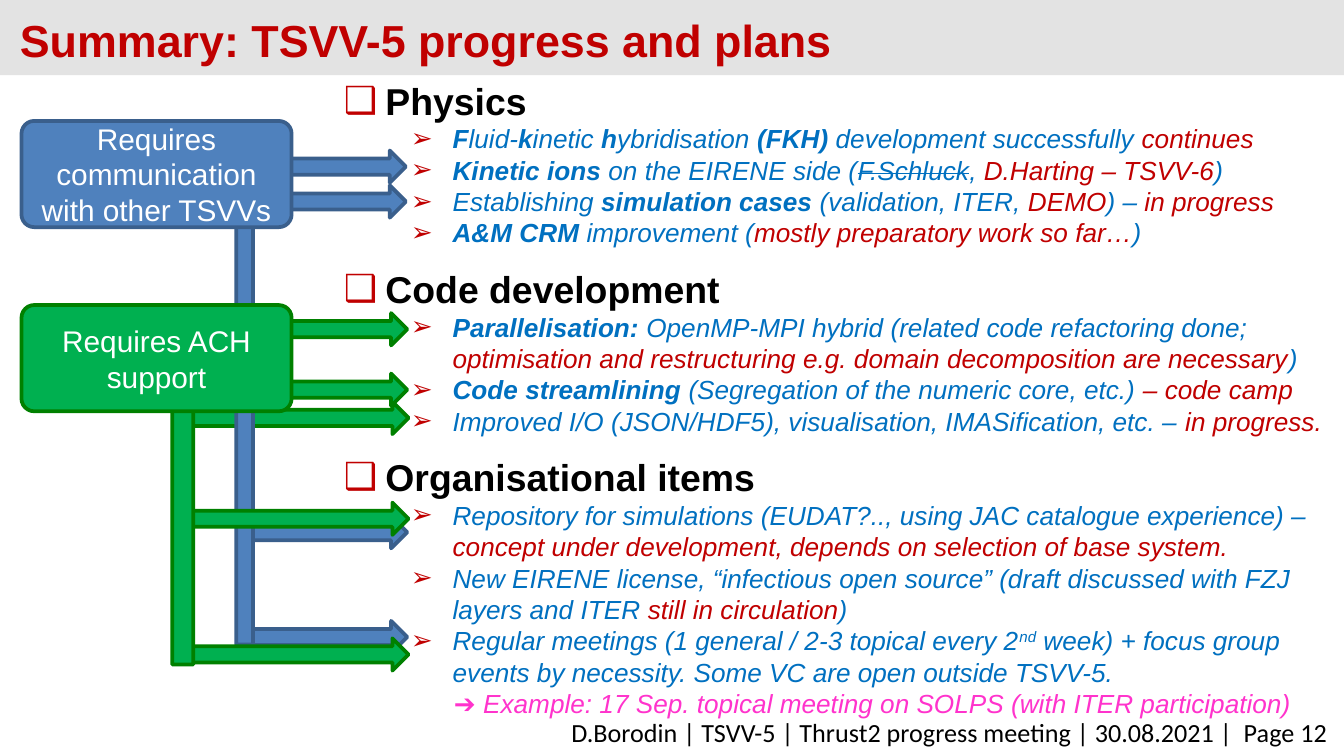
"""Build the TSVV-5 progress and plans summary slide."""
from dataclasses import dataclass

from lxml import etree
from pptx import Presentation
from pptx.dml.color import RGBColor
from pptx.enum.shapes import MSO_SHAPE
from pptx.enum.text import MSO_ANCHOR, PP_ALIGN
from pptx.oxml.ns import qn
from pptx.util import Inches, Pt

RECT = MSO_SHAPE.RECTANGLE
ROUNDED = MSO_SHAPE.ROUNDED_RECTANGLE
ARROW = MSO_SHAPE.RIGHT_ARROW
TOP = MSO_ANCHOR.TOP
MIDDLE = MSO_ANCHOR.MIDDLE
CENTER = PP_ALIGN.CENTER
RIGHT = PP_ALIGN.RIGHT


@dataclass(frozen=True)
class Theme:
    font: str = "Arial"
    footer_font: str = "Calibri"
    black: str = "000000"
    white: str = "FFFFFF"
    band: str = "E3E3E3"
    red: str = "C00000"
    text_blue: str = "0070C0"
    pink: str = "FF33CC"
    blue: tuple = ("4F81BD", "3A5F8C")
    green: tuple = ("00B050", "008000")
    title: int = 24
    heading: int = 20
    label: int = 16
    body: int = 14
    section_gap: float = 9.6


T = Theme()

STYLES = {
    "plain": {},
    "bold": {"bold": True},
    "status": {"color": T.red},
    "strike": {"strike": "sngStrike"},
    "super": {"baseline": "30000"},
}

SECTIONS = [
    ("Physics", [
        [("F", "bold"), ("luid-", "plain"), ("k", "bold"), ("inetic ", "plain"),
         ("h", "bold"), ("ybridisation ", "plain"), ("(FKH)", "bold"),
         (" development successfully ", "plain"), ("continues", "status")],
        [("Kinetic ions ", "bold"), ("on the EIRENE side (", "plain"),
         ("F.Schluck", "strike"), (", ", "plain"),
         ("D.Harting – TSVV-6", "status"), (")", "plain")],
        [("Establishing ", "plain"), ("simulation cases ", "bold"),
         ("(validation, ITER, ", "plain"), ("DEMO", "status"),
         (") – ", "plain"), ("in progress", "status")],
        [("A&M CRM ", "bold"), ("improvement (", "plain"),
         ("mostly preparatory work so far…", "status"), (")", "plain")],
    ]),
    ("Code development", [
        [("Parallelisation:", "bold"),
         (" OpenMP-MPI hybrid (related code refactoring done; ", "plain"),
         ("optimisation and restructuring e.g. domain decomposition are necessary",
          "status"), (")", "plain")],
        [("Code streamlining ", "bold"),
         ("(Segregation of the numeric core, etc.) ", "plain"),
         ("– code camp", "status")],
        [("Improved I/O (JSON/HDF5), visualisation, IMASification, etc. – ", "plain"),
         ("in progress.", "status")],
    ]),
    ("Organisational items", [
        [("Repository for simulations (EUDAT?.., using JAC catalogue experience) – ",
          "plain"),
         ("concept under development, depends on selection of base system.", "status")],
        [("New EIRENE license, “infectious open source” (draft discussed with FZJ "
          "layers and ITER ", "plain"),
         ("still in circulation", "status"), (")", "plain")],
        [("Regular meetings (1 general / 2-3 topical every 2", "plain"),
         ("nd", "super"),
         (" week) + focus group events by necessity. Some VC are open outside TSVV-5.",
          "plain")],
    ]),
]
EXAMPLE = "➔ Example: 17 Sep. topical meeting on SOLPS (with ITER participation)"


def rgb(color):
    """Return a colour object for a hex string."""
    return RGBColor.from_string(color)


def add_run(p, text, size=T.body, color=T.text_blue, font=T.font, bold=False,
            italic=False, **attributes):
    """Append a formatted run to a paragraph."""
    r = p.add_run()
    r.text = text
    r.font.name, r.font.size = font, Pt(size)
    r.font.bold, r.font.italic = bold, italic
    r.font.color.rgb = rgb(color)
    for name, value in attributes.items():
        r.font._element.set(name, value)


def add_box(shapes, x, y, w, h, anchor=TOP):
    """Add a wrapping text box and return its text frame."""
    tf = shapes.add_textbox(Inches(x), Inches(y), Inches(w), Inches(h)).text_frame
    tf.word_wrap = True
    tf.vertical_anchor = anchor
    return tf


def add_block(shapes, kind, x, y, w, h, fill, line=None):
    """Add a flat preset shape with an optional outline."""
    sp = shapes.add_shape(kind, Inches(x), Inches(y), Inches(w), Inches(h))
    sp.shadow.inherit = False
    sp.fill.solid()
    sp.fill.fore_color.rgb = rgb(fill)
    if line:
        sp.line.color.rgb = rgb(line)
        sp.line.width = Pt(2)
    else:
        sp.line.fill.background()
    return sp


def add_label(shapes, y, text, colors):
    """Add a rounded requirement box with a centred label."""
    sp = add_block(shapes, ROUNDED, 0.16, y, 2.01, 0.79, *colors)
    sp.adjustments[0] = 0.12
    tf = sp.text_frame
    tf.word_wrap = True
    tf.vertical_anchor = MIDDLE
    p = tf.paragraphs[0]
    p.alignment = CENTER
    add_run(p, text, T.label, T.white)


def add_arrows(shapes, x, w, tops, colors):
    """Add a column of equal right arrows."""
    for y in tops:
        add_block(shapes, ARROW, x, y, w, 0.24, *colors)


def add_trunk(shapes, x, y, w, h, colors):
    """Add an arrow turned upwards that links a label to its branches."""
    add_block(shapes, ARROW, x, y, w, h, *colors).rotation = 270


def indent(p, left, bullet=None):
    """Set the left margin and an optional hanging red bullet."""
    pPr = p._p.get_or_add_pPr()
    pPr.set("marL", str(Inches(left)))
    pPr.set("indent", str(Inches(-0.31 if bullet else 0)))
    if bullet:
        color = etree.SubElement(pPr, qn("a:buClr"))
        etree.SubElement(color, qn("a:srgbClr"), val=T.red)
        etree.SubElement(pPr, qn("a:buFont"), typeface=T.font)
        etree.SubElement(pPr, qn("a:buChar"), char=bullet)
    else:
        etree.SubElement(pPr, qn("a:buNone"))


def add_sections(tf):
    """Write the headings, their bullets and the closing example."""
    for i, (heading, items) in enumerate(SECTIONS):
        p = tf.add_paragraph() if i else tf.paragraphs[0]
        indent(p, 0.31, "❑")
        if i:
            p.space_before = Pt(T.section_gap)
        add_run(p, heading, T.heading, T.black, bold=True)
        for runs in items:
            p = tf.add_paragraph()
            p.level = 1
            indent(p, 0.81, "➢")
            for text, style in runs:
                add_run(p, text, italic=True, **STYLES[style])
    p = tf.add_paragraph()
    p.level = 1
    indent(p, 0.82)
    add_run(p, EXAMPLE, color=T.pink, italic=True)


def add_requirements(shapes):
    """Draw the two requirement boxes with their arrows."""
    add_arrows(shapes, 1.3, 1.74, [2.99], T.green)
    add_arrows(shapes, 1.78, 1.25, [4.62, 3.84], T.blue)
    add_trunk(shapes, 0.11, 2.96, 3.42, 0.25, T.blue)
    add_arrows(shapes, 1.77, 1.25, [1.12, 1.38], T.blue)
    add_label(shapes, 0.9, "Requires communication with other TSVVs", T.blue)
    add_arrows(shapes, 1.78, 1.25, [2.33, 2.78], T.green)
    add_arrows(shapes, 1.3, 1.74, [3.74, 4.75], T.green)
    add_trunk(shapes, 0.28, 3.71, 2.16, 0.31, T.green)
    add_label(shapes, 2.27, "Requires ACH support", T.green)


def main():
    """Build and save the slide."""
    prs = Presentation()
    prs.slide_width, prs.slide_height = Inches(10), Inches(10) * 9 // 16
    s = prs.slides.add_slide(prs.slide_layouts[6])
    add_block(s.shapes, RECT, 0, 0, 10, 0.56, T.band)
    p = add_box(s.shapes, 1.99, 5.28, 7.99, 0.34).paragraphs[0]
    p.alignment = RIGHT
    add_run(p, "D.Borodin | TSVV-5 | Thrust2 progress meeting | 30.08.2021 |  Page 12",
            color=T.black, font=T.footer_font)
    p = add_box(s.shapes, 0.05, 0.08, 9.17, 0.38, MIDDLE).paragraphs[0]
    p.line_spacing = Pt(32)
    add_run(p, "Summary: TSVV-5 progress and plans", T.title, T.red, bold=True)
    add_sections(add_box(s.shapes, 2.46, 0.53, 7.56, 5.45))
    add_requirements(s.shapes.add_group_shape().shapes)
    prs.save("out.pptx")


if __name__ == "__main__":
    main()
